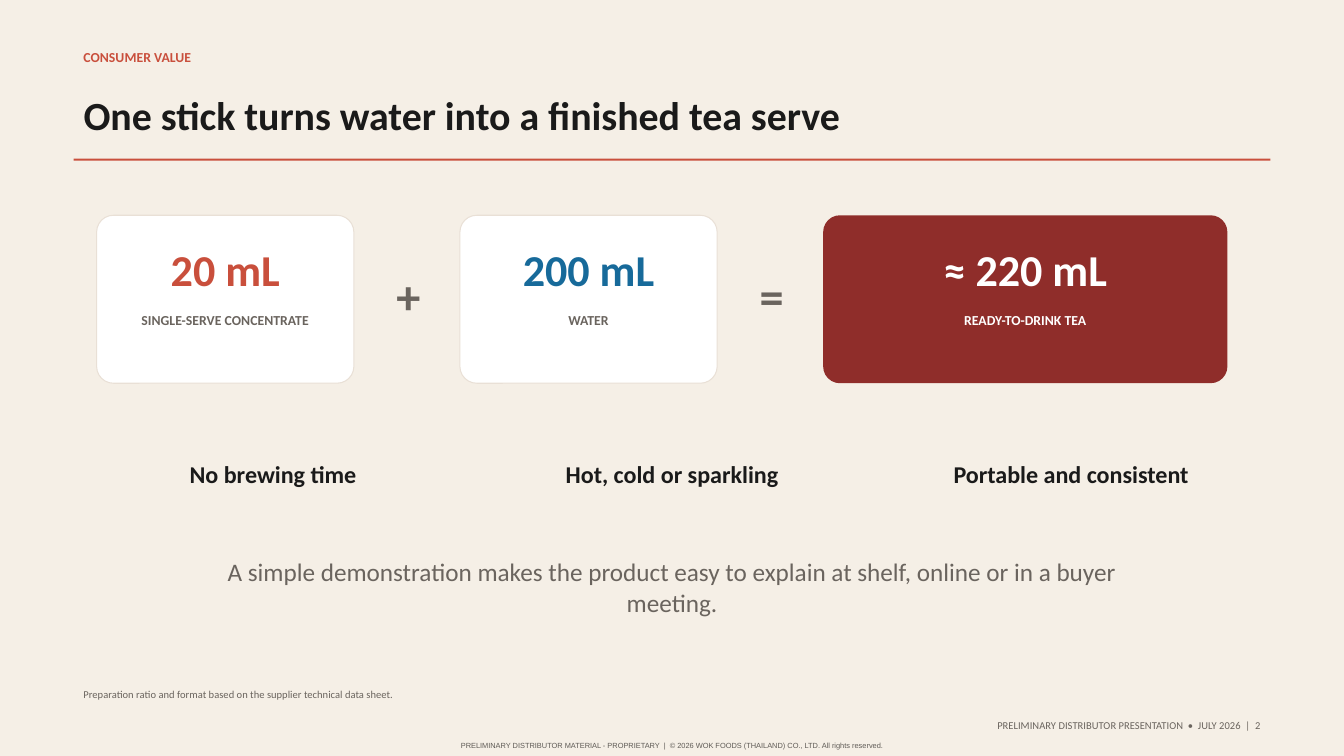
from pptx import Presentation
from pptx.dml.color import RGBColor
from pptx.enum.shapes import MSO_SHAPE
from pptx.enum.text import MSO_ANCHOR, MSO_AUTO_SIZE, PP_ALIGN
from pptx.util import Inches, Pt

LEFT, CENTER, RIGHT = PP_ALIGN.LEFT, PP_ALIGN.CENTER, PP_ALIGN.RIGHT
MIDDLE = MSO_ANCHOR.MIDDLE
NO_FIT = MSO_AUTO_SIZE.NONE
RECTANGLE, ROUNDED = MSO_SHAPE.RECTANGLE, MSO_SHAPE.ROUNDED_RECTANGLE
COLUMNS, ROWS = 128, 72
TITLE_ONLY = 5

PAPER, WHITE, BORDER = "F5EFE6", "FFFFFF", "E9E0D6"
INK, GRAY, LEGAL_GRAY = "1A1A1A", "6A645E", "5F5B56"
CORAL, BLUE, MAROON = "C94F3C", "176A9A", "8F2D2A"


def color(value):
    return RGBColor.from_string(value)


class Page:
    """Draws styled elements on one slide, placed in grid columns and rows."""

    def __init__(self, deck):
        self.column = deck.slide_width / COLUMNS
        self.row = deck.slide_height / ROWS
        self.slide = deck.slides.add_slide(deck.slide_layouts[TITLE_ONLY])
        self.slide.background.fill.solid()
        self.slide.background.fill.fore_color.rgb = color(PAPER)

    def place(self, left, top, width, height):
        return (round(left * self.column), round(top * self.row),
                round(width * self.column), round(height * self.row))

    def fill_text(self, box, words, size, tint, bold, align, font="Calibri"):
        frame = box.text_frame
        frame.text = words
        frame.word_wrap = True
        frame.auto_size = NO_FIT
        frame.vertical_anchor = MIDDLE
        para = frame.paragraphs[0]
        para.alignment = align
        span = para.runs[0].font
        span.name, span.size, span.bold = font, Pt(size), bold
        span.color.rgb = color(tint)

    def title(self, area, words, size):
        box = self.slide.shapes.title
        box.left, box.top, box.width, box.height = self.place(*area)
        self.fill_text(box, words, size, INK, True, LEFT)

    def text(self, area, words, size, tint=GRAY, bold=False, align=CENTER):
        box = self.slide.shapes.add_textbox(*self.place(*area))
        self.fill_text(box, words, size, tint, bold, align)

    def legal(self, area, words, size):
        box = self.slide.shapes.add_textbox(*self.place(*area))
        self.fill_text(box, words, size, LEGAL_GRAY, False, CENTER, "Arial")
        frame = box.text_frame
        frame.word_wrap = False
        frame.margin_left = frame.margin_right = 0
        frame.margin_top = frame.margin_bottom = 0

    def panel(self, area, kind, fill, line=None):
        shape = self.slide.shapes.add_shape(kind, *self.place(*area))
        shape.shadow.inherit = False
        shape.fill.solid()
        shape.fill.fore_color.rgb = color(fill)
        if line:
            shape.line.color.rgb = color(line)
            shape.line.width = Pt(0.75)
        else:
            shape.line.fill.background()
        return shape

    def card(self, left, width, inset, amount, label, fill, line, tints):
        panel = self.panel((left, 20.5, width, 16), ROUNDED, fill, line)
        panel.adjustments[0] = 0.1
        inner_left, inner_width = left + inset, width - 2 * inset
        self.text((inner_left, 22.4, inner_width, 6.4), amount, 31.5, tints[0], True)
        self.text((inner_left, 28.9, inner_width, 3.2), label, 9.8, tints[1], True)


def main():
    deck = Presentation()
    deck.slide_width, deck.slide_height = Inches(13.33), Inches(7.5)
    page = Page(deck)

    page.text((7, 4.2, 44, 2.4), "CONSUMER VALUE", 9.8, CORAL, True, LEFT)
    page.title((7, 7.6, 112, 6.6), "One stick turns water into a finished tea serve", 28.5)
    page.panel((7, 15.1, 114, 0.2), RECTANGLE, CORAL)

    cards = [
        (24.5, 1, "20 mL", "SINGLE-SERVE CONCENTRATE", WHITE, BORDER, (CORAL, GRAY), "+"),
        (24.5, 1, "200 mL", "WATER", WHITE, BORDER, (BLUE, GRAY), "="),
        (38.5, 1.5, "≈ 220 mL", "READY-TO-DRINK TEA", MAROON, None, (WHITE, WHITE), None),
    ]
    left, gap = 9.2, 10.1
    for width, *content, sign in cards:
        page.card(left, width, *content)
        if sign:
            page.text((left + width + 1.7, 24.6, 7, 7), sign, 34.5, GRAY, True)
        left += width + gap

    benefits = ["No brewing time", "Hot, cold or sparkling", "Portable and consistent"]
    for index, benefit in enumerate(benefits):
        page.text((10.5 + 38 * index, 43, 31, 4.2), benefit, 17.2, INK, True)

    page.text((16.5, 53, 95, 5.8), "A simple demonstration makes the product easy to explain "
              "at shelf, online or in a buyer meeting.", 18)
    page.text((7, 65.2, 85, 1.8), "Preparation ratio and format based on the supplier "
              "technical data sheet.", 7.5, align=LEFT)
    page.text((77, 68.2, 44, 1.8), "PRELIMINARY DISTRIBUTOR PRESENTATION  •  JULY 2026  |  2",
              7.5, align=RIGHT)
    page.legal((20.2, 70.5, 87.6, 1), "PRELIMINARY DISTRIBUTOR MATERIAL - PROPRIETARY  |  "
               "© 2026 WOK FOODS (THAILAND) CO., LTD. All rights reserved.", 5.3)
    deck.save("out.pptx")


if __name__ == "__main__":
    main()
